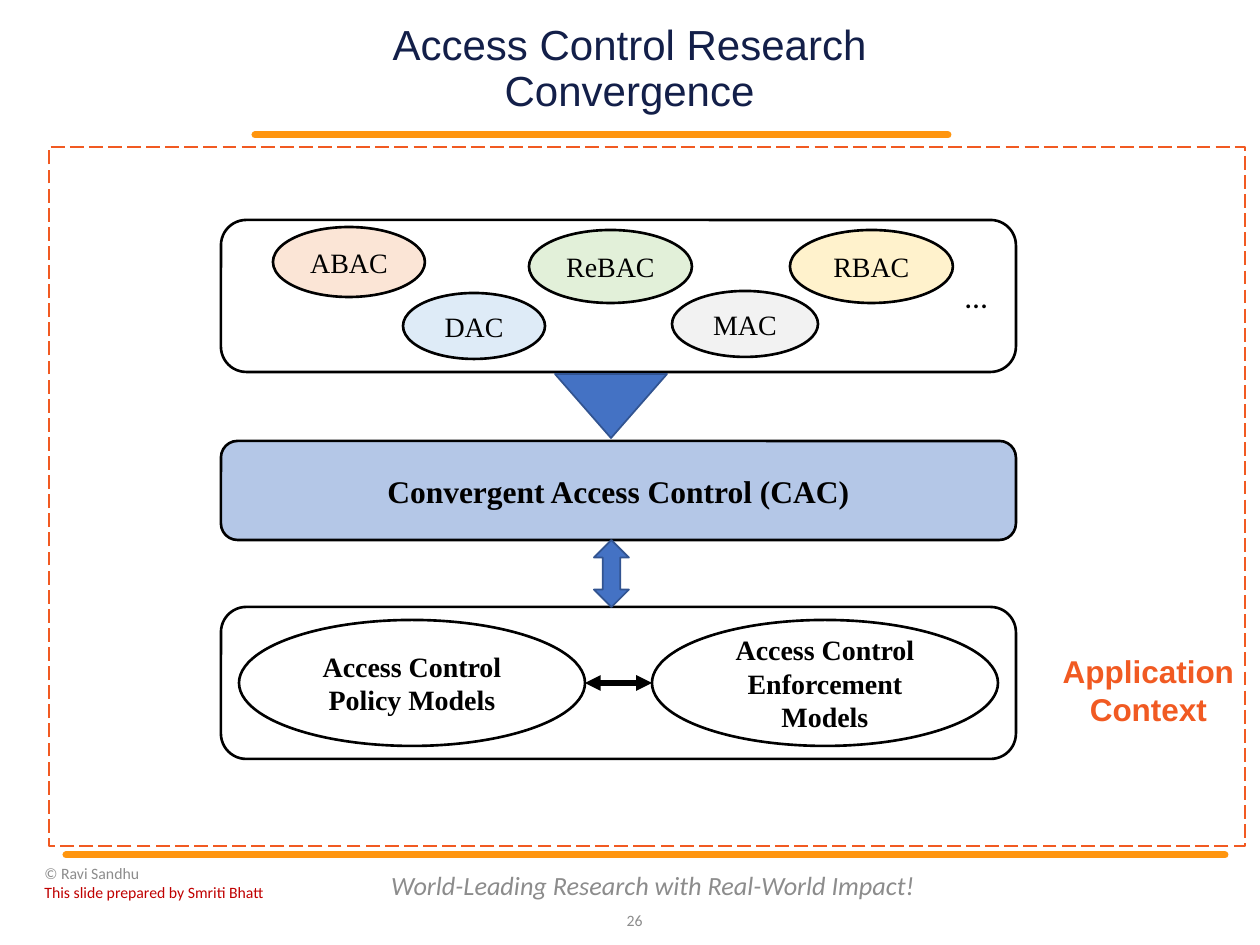
import pptx
import pptx.dml.color
import pptx.enum.dml
import pptx.enum.shapes
import pptx.enum.text
import pptx.oxml.ns
import pptx.util
from lxml import etree

SHAPE = pptx.enum.shapes.MSO_SHAPE
ALIGN = pptx.enum.text.PP_ALIGN
ANCHOR = pptx.enum.text.MSO_ANCHOR
EMU_PER_PX = 914400 / 126
SERIF, SANS, FOOTER = "Times New Roman", "Arial", "Calibri"
BLACK, WHITE, ORANGE, GREY = "000000", "FFFFFF", "FF950E", "8C8C8C"
BLUE, DARK_BLUE, CONTEXT = "4472C4", "325491", "F15A22"


def px(length):
    return pptx.util.Emu(round(length * EMU_PER_PX))


def rgb(colour):
    return pptx.dml.color.RGBColor.from_string(colour)


def add_xml(parent, tag, **attributes):
    return etree.SubElement(parent, pptx.oxml.ns.qn(tag), **attributes)


class Sketch:
    """Draws styled text, shapes and lines on the current slide."""

    def __init__(self, slide):
        self.slide = slide

    def caption(self, frame, lines, size, font, colour=BLACK, bold=False, italic=False,
                align=ALIGN.CENTER, anchor=ANCHOR.MIDDLE, wrap=True, spacing=None):
        frame.word_wrap = wrap
        frame.vertical_anchor = anchor
        for index, line in enumerate(lines):
            paragraph = frame.paragraphs[0] if index == 0 else frame.add_paragraph()
            paragraph.alignment = align
            if spacing:
                paragraph.line_spacing = spacing
            run = paragraph.add_run()
            run.text = line
            run.font.name = font
            run.font.size = pptx.util.Pt(size)
            run.font.bold = bold
            run.font.italic = italic
            run.font.color.rgb = rgb(colour)

    def text(self, box, lines, size, font, inset=None, **style):
        label = self.slide.shapes.add_textbox(*map(px, box))
        frame = label.text_frame
        if inset is not None:
            frame.margin_left = frame.margin_right = px(inset)
            frame.margin_top = frame.margin_bottom = px(inset)
        self.caption(frame, lines, size, font, **style)
        return label

    def shape(self, preset, box, fill=None, line=BLACK, width=1.5, dash=None):
        figure = self.slide.shapes.add_shape(preset, *map(px, box))
        figure.shadow.inherit = False
        if fill:
            figure.fill.solid()
            figure.fill.fore_color.rgb = rgb(fill)
        else:
            figure.fill.background()
        if line:
            figure.line.color.rgb = rgb(line)
            figure.line.width = pptx.util.Pt(width)
            if dash:
                figure.line.dash_style = dash
        else:
            figure.line.fill.background()
        return figure

    def line(self, start, end, colour, width, arrows=False):
        straight = pptx.enum.shapes.MSO_CONNECTOR.STRAIGHT
        rule = self.slide.shapes.add_connector(straight, *map(px, start + end))
        rule.line.color.rgb = rgb(colour)
        rule.line.width = pptx.util.Pt(width)
        outline = rule.line._get_or_add_ln()
        if arrows:
            add_xml(outline, "a:headEnd", type="triangle")
            add_xml(outline, "a:tailEnd", type="triangle")
        else:
            outline.set("cap", "rnd")
            add_xml(outline, "a:round")
        add_xml(rule._element.spPr, "a:effectLst")


def main():
    deck = pptx.Presentation()
    deck.slide_width, deck.slide_height = px(1260), px(945)
    sketch = Sketch(deck.slides.add_slide(deck.slide_layouts[6]))

    sketch.line((255, 135), (948, 135), ORANGE, 4)
    sketch.line((66, 855), (1225, 855), ORANGE, 4)
    sketch.text((299, 38, 661, 64), ["Access Control Research Convergence"], 24, SANS,
                inset=0, colour="131F49", spacing=0.9)

    sketch.text((378, 860, 550, 50), ["World-Leading Research with Real-World Impact!"],
                15, FOOTER, colour=GREY, italic=True)
    sketch.text((605, 895, 50, 50), ["26"], 9, FOOTER, colour=GREY, align=ALIGN.RIGHT)
    credits = sketch.text((32, 860, 346, 45),
                          ["© Ravi Sandhu", "This slide prepared by Smriti Bhatt"],
                          9, FOOTER, colour=GREY, align=ALIGN.LEFT)
    credits.text_frame.paragraphs[1].runs[0].font.color.rgb = rgb("C00000")

    sketch.shape(SHAPE.RECTANGLE, (49, 147, 1196, 699), line=CONTEXT, width=1,
                 dash=pptx.enum.dml.MSO_LINE.LONG_DASH)
    for top, height, fill, title in (
        (220, 152, None, []),
        (441, 99, "B4C7E7", ["Convergent Access Control (CAC)"]),
        (607, 152, None, []),
    ):
        layer = sketch.shape(SHAPE.ROUNDED_RECTANGLE, (221, top, 795, height), fill)
        sketch.caption(layer.text_frame, title, 18, SERIF, bold=True)

    for name, box, fill in (
        ("ABAC", (273, 227, 152, 70), "FBE5D6"),
        ("ReBAC", (529, 230, 163, 73), "E2F0D9"),
        ("RBAC", (790, 230, 163, 73), "FFF2CC"),
        ("DAC", (403, 293, 142, 66), "DEEBF7"),
        ("MAC", (672, 291, 146, 66), "F2F2F2"),
    ):
        model = sketch.shape(SHAPE.OVAL, box, fill)
        sketch.caption(model.text_frame, [name], 16, SERIF)
    sketch.text((953, 271, 55, 50), ["…"], 18, FOOTER, align=ALIGN.LEFT, anchor=ANCHOR.TOP)

    convergence = sketch.shape(SHAPE.UP_ARROW, (555, 374, 112, 64), BLUE, DARK_BLUE, 1)
    convergence.rotation = 180
    convergence.adjustments[1] = 1.55
    sketch.shape(SHAPE.UP_DOWN_ARROW, (594, 540, 35, 67), BLUE, DARK_BLUE, 1)

    for left, name in ((239, "Access Control Policy Models"),
                       (652, "Access Control Enforcement Models")):
        family = sketch.shape(SHAPE.OVAL, (left, 620, 346, 126))
        sketch.caption(family.text_frame, [name], 16, SERIF, bold=True)
    sketch.line((585, 683), (652, 683), BLACK, 3, arrows=True)

    context = sketch.shape(SHAPE.ROUNDED_RECTANGLE, (1054, 659, 189, 62), WHITE, None)
    sketch.caption(context.text_frame, ["Application", "Context"], 18, SANS,
                   colour=CONTEXT, bold=True, wrap=False)

    deck.save("out.pptx")


if __name__ == "__main__":
    main()
